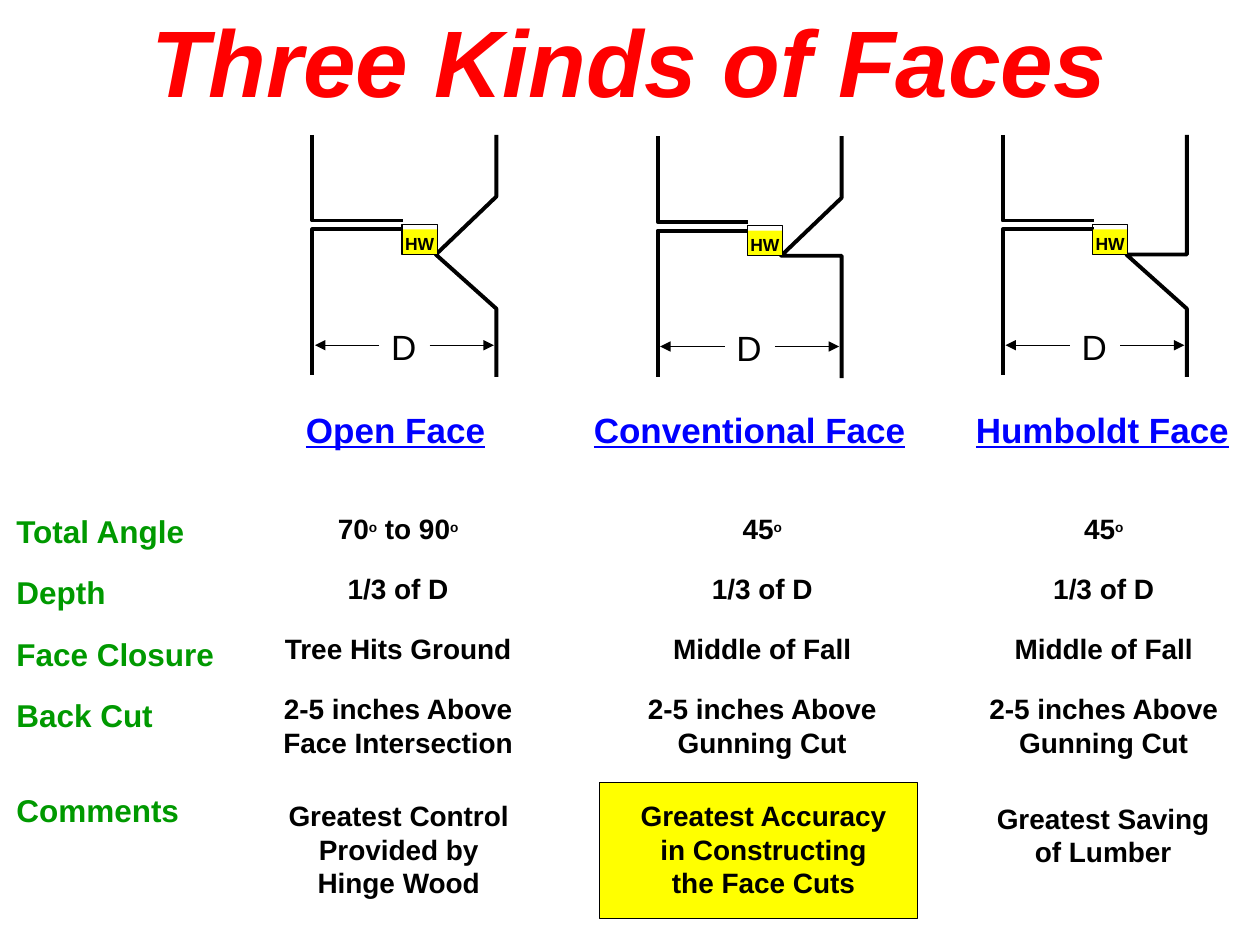
"""Build a slide comparing three kinds of felling faces."""
from pptx import Presentation
from pptx.dml.color import RGBColor as Rgb
from pptx.enum.shapes import MSO_CONNECTOR as Link, MSO_SHAPE as Kind
from pptx.enum.text import MSO_ANCHOR as Anchor, PP_ALIGN as Align
from pptx.oxml.ns import qn
from pptx.util import Inches, Pt
from lxml.etree import SubElement

TITLE = "Three Kinds of Faces"
LABELS = ["Total Angle", "Depth", "Face Closure", "Back Cut"]
HEADS = [("Open Face", 3.14, 1.45), ("Conventional Face", 5.95, 2.5),
         ("Humboldt Face", 8.75, 2.04)]
MIDS = [3.16, 6.05, 8.76]
ROWS = [
    (0.29, [("70^o^ to 90^o", 1.07), ("45^o", 0.41), ("45^o", 0.41)]),
    (0.29, [("1/3 of D", 0.83)] * 3),
    (0.29, [("Tree Hits Ground", 1.84), ("Middle of Fall", 1.44),
            ("Middle of Fall", 1.44)]),
    (0.56, [("2-5 inches Above\vFace Intersection", 1.87),
            ("2-5 inches Above\vGunning Cut", 1.84),
            ("2-5 inches Above\vGunning Cut", 1.84)]),
]
NOTES = [("Greatest Control\vProvided by\vHinge Wood", 2.28, 6.32, 1.77, 0.83),
         ("Greatest Saving\vof Lumber", 7.9, 6.34, 1.71, 0.56)]
BEST = "Greatest Accuracy\vin Constructing\vthe Face Cuts"
TREES = [(2.48, 0, 1.56, 2.45), (5.22, 0.01, 1.56, 2.02), (7.96, 0, 2.02, 2.45)]
TOP, PITCH = 4.04, 0.476


def color(code):
    return Rgb.from_string(code)


def write(shape, text, size=16, ink="000000", bold=True, italic=False,
          line=False, align=Align.CENTER, gap=0, inset=(0, 0.02), wrap=False):
    frame = shape.text_frame
    frame.word_wrap = wrap
    frame.vertical_anchor = Anchor.TOP
    frame.margin_left, frame.margin_top = map(Inches, inset)
    frame.margin_right = frame.margin_bottom = 0
    for i, item in enumerate(text.split("\n")):
        para = frame.add_paragraph() if i else frame.paragraphs[0]
        para.alignment = align
        para.space_before = Pt(gap if i else 0)
        for j, part in enumerate(item.split("^")):
            for k, piece in enumerate(part.split("\v")):
                if k:
                    para.add_line_break()
                run = para.add_run()
                run.text = piece
                font = run.font
                font.name, font.size = "Arial", Pt(13.5 if j % 2 else size)
                font.bold, font.italic, font.underline = bold, italic, line
                font.color.rgb = color(ink)
                if j % 2:
                    font._element.set("baseline", "31000")


def label(parts, text, x, y, w, h, **style):
    write(parts.add_textbox(*map(Inches, (x, y, w, h))), text, **style)


def rect(parts, x, y, w, h, fill=None, edge=None):
    box = parts.add_shape(Kind.RECTANGLE, *map(Inches, (x, y, w, h)))
    paint(box, fill, edge, 0.75)
    return box


def paint(shape, fill, edge, width):
    shape.shadow.inherit = False
    if fill:
        shape.fill.solid()
        shape.fill.fore_color.rgb = color(fill)
    else:
        shape.fill.background()
    if edge:
        shape.line.color.rgb = color(edge)
        shape.line.width = Pt(width)
    else:
        shape.line.fill.background()


def arrow(parts, x, end, y):
    link = parts.add_connector(Link.STRAIGHT, *map(Inches, (x, y, end, y)))
    link.line.color.rgb = color("000000")
    link.line.width = Pt(0.75)
    SubElement(link.line._get_or_add_ln(), qn("a:tailEnd"), type="triangle")
    SubElement(link._element.spPr, qn("a:effectLst"))


def tree(parts, x, y, upper, lower):
    paths = [
        [(0, 1.07), (0, 1.75), (0.72, 1.75)],
        [(0.72, 1.82), (0, 1.82), (0, 2.98)],
        [(1.46, 1.07), (1.46, upper), (0.98, 2.02), (1.46, lower), (1.46, 2.99)],
    ]
    pen = None
    for path in paths:
        spots = [(Inches(x + a), Inches(y + b)) for a, b in path]
        if pen:
            pen.move_to(*spots[0])
        else:
            pen = parts.build_freeform(*spots[0])
        pen.add_line_segments(spots[1:], close=False)
    paint(pen.convert_to_shape(), None, "000000", 2.25)
    arrow(parts, x + 0.53, x + 0.02, y + 2.74)
    arrow(parts, x + 0.93, x + 1.44, y + 2.74)
    label(parts, "D", x + 0.61, y + 2.56, 0.23, 0.36, size=20, bold=False)
    rect(parts, x + 0.71, y + 1.82, 0.28, 0.2, fill="FFFF00")
    hinge = rect(parts, x + 0.71, y + 1.78, 0.28, 0.24, edge="000000")
    write(hinge, "HW", size=10, inset=(0, 0.07))


def main():
    deck = Presentation()
    deck.slide_width, deck.slide_height = Inches(10), Inches(7.5)
    slide = deck.slides.add_slide(deck.slide_layouts[5])
    parts = slide.shapes
    head = parts.title
    head.left, head.top, head.width, head.height = map(
        Inches, (0.09, -0.13, 9.81, 1.53))
    write(head, TITLE, size=54, ink="FF0000", italic=True, align=Align.LEFT,
          inset=(1.11, 0.15), wrap=True)

    for text, mid, w in HEADS:
        label(parts, text, mid - w / 2, 3.22, w, 0.36, size=20, ink="0000FF",
              line=True)
    for i, (h, cells) in enumerate(ROWS):
        for mid, (text, w) in zip(MIDS, cells):
            label(parts, text, mid - w / 2, TOP + i * PITCH, w, h)
    green = dict(size=18, ink="009900", align=Align.LEFT, inset=(0.01, 0.02))
    label(parts, "\n".join(LABELS), 0.12, TOP, 1.6, 1.76, gap=13.6, **green)
    label(parts, "Comments", 0.12, 6.26, 1.32, 0.33, **green)
    for note in NOTES:
        label(parts, *note)
    best = rect(parts, 4.76, 6.21, 2.52, 1.08, fill="FFFF00", edge="000000")
    write(best, BEST, inset=(0.08, 0.13))

    for spot in TREES:
        tree(parts.add_group_shape().shapes, *spot)
    deck.save("out.pptx")


if __name__ == "__main__":
    main()
